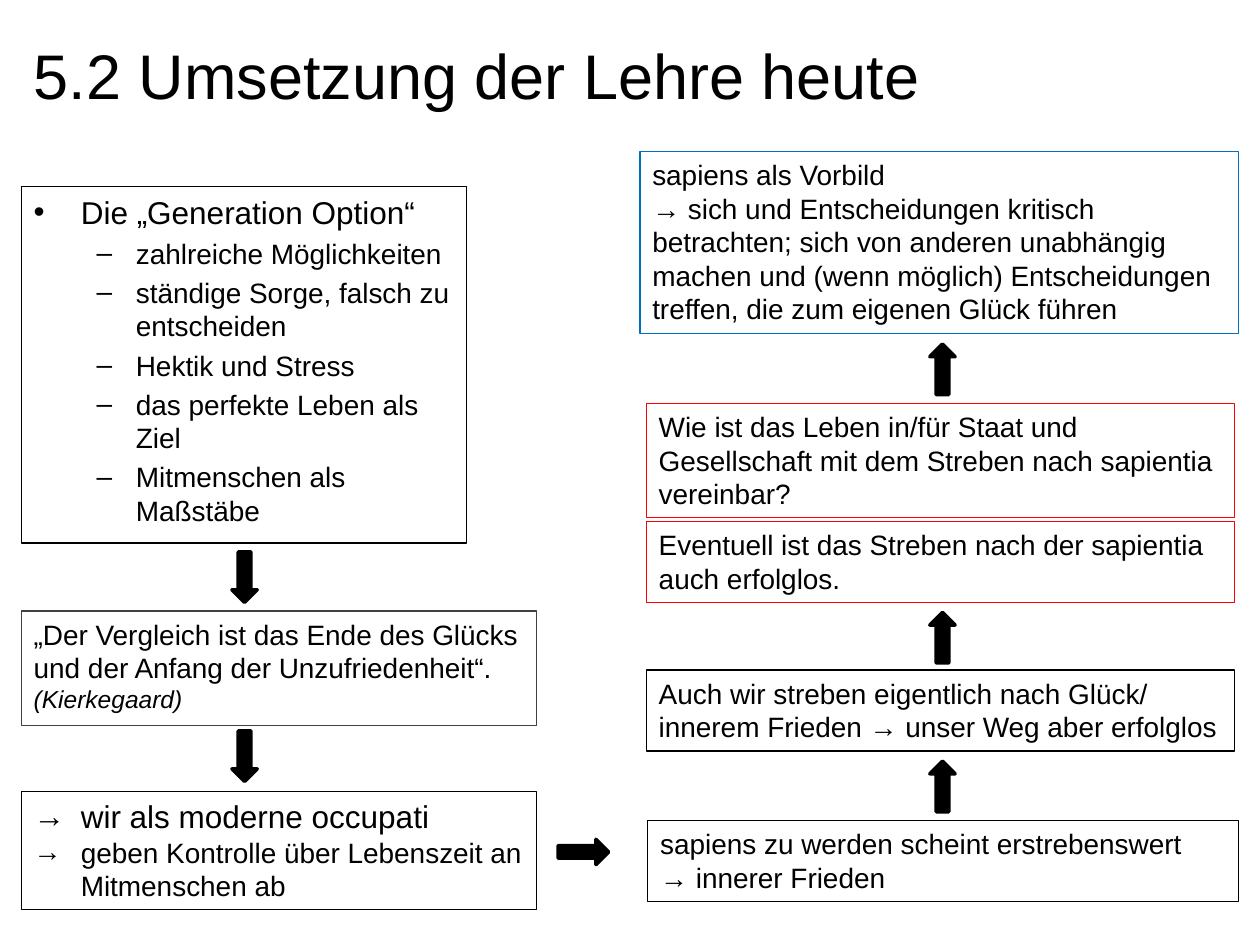
from pptx import Presentation
from pptx import util as u
from pptx.dml.color import RGBColor
from pptx.enum import shapes, text
from pptx.oxml.ns import qn
from lxml import etree

COLORS = {"black": "000000", "white": "FFFFFF", "red": "FF0000",
          "blue": "0070C0", "grey": "404040"}
BULLETS = {"•": (0.95, -0.95), "→": (0.95, -0.95), "–": (2.06, -0.79)}


class SlideBuilder:
    def __init__(self, page, font="Arial", size=16):
        self.page = page
        self.font = font
        self.size = size

    def color(self, name):
        return RGBColor.from_string(COLORS[name])

    def add_span(self, para, content, **changes):
        span = para.add_run()
        span.text = content
        values = {"name": self.font, "size": u.Pt(self.size), **changes}
        for name, value in values.items():
            setattr(span.font, name, value)
        span.font.color.rgb = self.color("black")

    def bullet(self, para, symbol):
        margin, indent = BULLETS[symbol]
        props = para._p.get_or_add_pPr()
        props.set("marL", str(u.Cm(margin)))
        props.set("indent", str(u.Cm(indent)))
        etree.SubElement(props, qn("a:buFont"), typeface=self.font)
        etree.SubElement(props, qn("a:buChar"), char=symbol)

    def title(self, content, place):
        box = self.page.shapes.title
        box.left, box.top, box.width, box.height = map(u.Cm, place)
        box.text_frame.vertical_anchor = text.MSO_ANCHOR.MIDDLE
        para = box.text_frame.paragraphs[0]
        para.alignment = text.PP_ALIGN.LEFT
        self.add_span(para, content, size=u.Pt(36))

    def shape(self, kind, place, fill, line, weight):
        shape = self.page.shapes.add_shape(kind, *map(u.Cm, place))
        shape.shadow.inherit = False
        if fill:
            shape.fill.solid()
            shape.fill.fore_color.rgb = self.color(fill)
        else:
            shape.fill.background()
        shape.line.color.rgb = self.color(line)
        shape.line.width = u.Pt(weight)
        return shape

    def box(self, place, paragraphs, line="black", fill=None, spacing=0):
        box = self.shape(shapes.MSO_SHAPE.RECTANGLE, place, fill, line, 0.75)
        frame = box.text_frame
        settings = {"word_wrap": True, "vertical_anchor": text.MSO_ANCHOR.TOP,
                    "auto_size": text.MSO_AUTO_SIZE.SHAPE_TO_FIT_TEXT}
        for name, value in settings.items():
            setattr(frame, name, value)
        for index, (symbol, spans) in enumerate(paragraphs):
            para = frame.add_paragraph() if index else frame.paragraphs[0]
            para.alignment = text.PP_ALIGN.LEFT
            if spacing:
                size = spans[0][1].get("size", u.Pt(self.size))
                para.space_before = int(size * spacing)
            if symbol:
                self.bullet(para, symbol)
            for content, changes in spans:
                self.add_span(para, content, **changes)

    def arrow(self, left, top, rotation=0):
        arrow = self.shape(shapes.MSO_SHAPE.RIGHT_ARROW,
                           (left, top, 1.02, 0.51), "black", "black", 2)
        arrow.rotation = rotation


def item(content, symbol=None, **changes):
    return symbol, [(content, changes)]


def main():
    deck = Presentation()
    deck.slide_width, deck.slide_height = u.Cm(25.4), u.Cm(19.05)
    builder = SlideBuilder(deck.slides.add_slide(deck.slide_layouts[5]))
    large = u.Pt(18)

    builder.title("5.2 Umsetzung der Lehre heute", (0.43, 0.13, 22.86, 2.72))

    builder.box((0.43, 12.32, 10.39, 2.31), [(None, [
        ("„Der Vergleich ist das Ende des Glücks und der Anfang der "
         "Unzufriedenheit“. ", {}),
        ("(Kierkegaard)", {"size": u.Pt(14), "italic": True})])], "grey")
    builder.box((0.43, 15.95, 10.39, 2.39), [
        item("wir als moderne occupati", "→", size=large),
        item("geben Kontrolle über Lebenszeit an Mitmenschen ab", "→")])
    generation = ["zahlreiche Möglichkeiten",
                  "ständige Sorge, falsch zu entscheiden",
                  "Hektik und Stress", "das perfekte Leben als Ziel",
                  "Mitmenschen als Maßstäbe"]
    builder.box((0.43, 3.76, 8.97, 7.19),
                [item("Die „Generation Option“", "•", size=large)]
                + [item(point, "–") for point in generation],
                fill="white", spacing=0.2)

    steps = [
        ((13.06, 16.54, 11.91, 1.63), "black",
         ["sapiens zu werden scheint erstrebenswert", "→ innerer Frieden"]),
        ((13.03, 13.51, 11.86, 1.63), "black",
         ["Auch wir streben eigentlich nach Glück/ innerem Frieden → "
          "unser Weg aber erfolglos"]),
        ((13.03, 10.52, 11.86, 1.63), "red",
         ["Eventuell ist das Streben nach der sapientia auch erfolglos."]),
        ((13.03, 8.13, 11.86, 2.31), "red",
         ["Wie ist das Leben in/für Staat und Gesellschaft mit dem Streben "
          "nach sapientia vereinbar?"]),
        ((12.9, 3.05, 12.07, 3.68), "blue",
         ["sapiens als Vorbild",
          "→ sich und Entscheidungen kritisch betrachten; sich von anderen "
          "unabhängig machen und (wenn möglich) Entscheidungen treffen, "
          "die zum eigenen Glück führen"]),
    ]
    for place, line, lines in steps:
        builder.box(place, [item(content) for content in lines], line)

    for top in (11.38, 14.99):
        builder.arrow(4.42, top, 90)
    builder.arrow(11.25, 16.92)
    for top in (15.6, 12.6, 7.19):
        builder.arrow(18.49, top, 270)

    deck.save("out.pptx")


if __name__ == "__main__":
    main()
